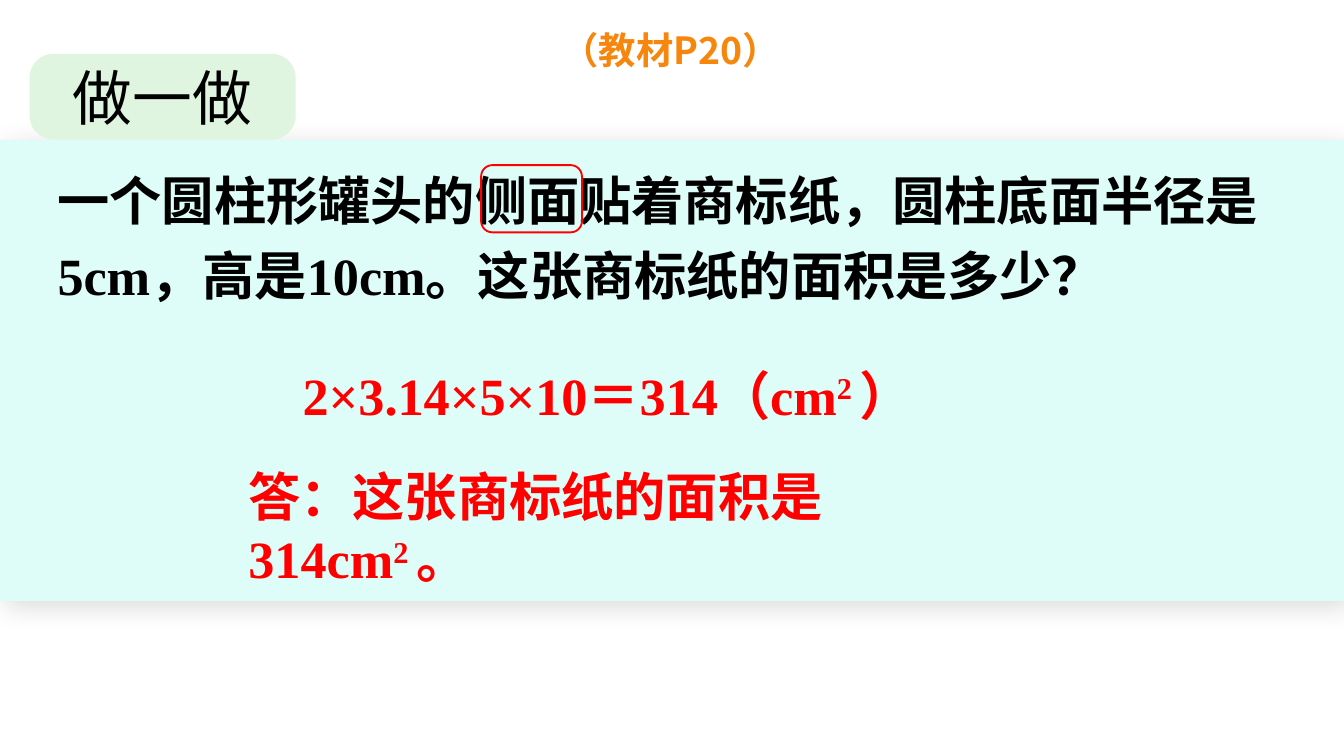
import pptx
import pptx.dml.color
import pptx.enum.lang
import pptx.enum.shapes
import pptx.enum.text
import pptx.oxml
import pptx.oxml.ns
import pptx.util
from pptx.util import Pt

RGBColor = pptx.dml.color.RGBColor
Shapes = pptx.enum.shapes.MSO_SHAPE

BLACK = RGBColor(0x00, 0x00, 0x00)
RED = RGBColor(0xFF, 0x00, 0x00)
ORANGE = RGBColor(0xF7, 0x86, 0x0C)
PANEL_FILL = RGBColor(0xDE, 0xFD, 0xF8)
TAG_FILL = RGBColor(0xE0, 0xF5, 0xE0)

SERIF = "Times New Roman"
SANS = "Noto Sans CJK SC"

PANEL_SHADOW = (
    '<a:effectLst %s><a:outerShdw blurRad="%d" dist="%d" dir="2700000" algn="tl" rotWithShape="0">'
    '<a:srgbClr val="000000"><a:alpha val="15000"/></a:srgbClr></a:outerShdw></a:effectLst>'
)


def write_text(paragraph, parts, font_name, size, color, bold=True):
    """Write (text, is_superscript) parts in one shared font."""
    for text, is_superscript in parts:
        run = paragraph.add_run()
        run.text = text
        run.font.language_id = pptx.enum.lang.MSO_LANGUAGE_ID.SIMPLIFIED_CHINESE
        if is_superscript:
            run.font._element.set("baseline", "30000")
    font = paragraph.font
    font.name, font.size, font.bold = font_name, Pt(size), bold
    font.color.rgb = color
    east_asian = pptx.oxml.parse_xml(
        '<a:ea %s typeface="%s"/>' % (pptx.oxml.ns.nsdecls("a"), SANS))
    font._element.find(pptx.oxml.ns.qn("a:latin")).addnext(east_asian)


def add_text(slide, left, top, width, height, parts, font_name=SERIF, size=28,
             color=RED, margin_left=7.2, margin_right=7.2):
    box = slide.shapes.add_textbox(Pt(left), Pt(top), Pt(width), Pt(height))
    frame = box.text_frame
    frame.word_wrap = True
    frame.margin_left, frame.margin_right = Pt(margin_left), Pt(margin_right)
    paragraph = frame.paragraphs[0]
    write_text(paragraph, parts, font_name, size, color)
    return paragraph


def add_block(slide, kind, left, top, width, height, fill=None):
    shape = slide.shapes.add_shape(kind, Pt(left), Pt(top), Pt(width), Pt(height))
    shape.shadow.inherit = False
    if fill is None:
        shape.fill.background()
    else:
        shape.fill.solid()
        shape.fill.fore_color.rgb = fill
        shape.line.fill.background()
    return shape


def add_panel(slide, left, top, width, height):
    panel = add_block(slide, Shapes.RECTANGLE, left, top, width, height, PANEL_FILL)
    properties = panel._element.spPr
    empty_effects = properties.find(pptx.oxml.ns.qn("a:effectLst"))
    shadow = PANEL_SHADOW % (pptx.oxml.ns.nsdecls("a"), Pt(15), Pt(5))
    properties.replace(empty_effects, pptx.oxml.parse_xml(shadow))


def add_exercise(slide, left, top, width, height):
    """Place the panel with the question, the calculation and the answer."""
    add_panel(slide, left, top, width, height)
    question = add_text(
        slide, left + 23.76, top + 5, 665.28, 88.56,
        [("一个圆柱形罐头的侧面贴着商标纸，圆柱底面半径是5cm，高是10cm。这张商标纸的面积是多少？", False)],
        color=BLACK)
    question.line_spacing = 1.2
    add_text(slide, left + 126, top + 170, 449.28, 41,
             [("答：这张商标纸的面积是314cm", False), ("2 ", True), ("。", False)],
             margin_right=50)
    add_text(slide, left + 133.92, top + 116, 444.96, 41,
             [("2×3.14×5×10＝314（cm", False), ("2 ", True), ("）", False)],
             margin_left=28.2)


def add_heading(slide, left, top, width, height):
    tag = add_block(slide, Shapes.ROUNDED_RECTANGLE, left, top, width, height, TAG_FILL)
    tag.adjustments[0] = 0.28
    frame = tag.text_frame
    frame.vertical_anchor = pptx.enum.text.MSO_ANCHOR.MIDDLE
    paragraph = frame.paragraphs[0]
    paragraph.alignment = pptx.enum.text.PP_ALIGN.CENTER
    write_text(paragraph, [("做一做", False)], SANS, 32, BLACK, bold=False)


def add_keyword_frame(slide, left, top, width, height):
    frame = add_block(slide, Shapes.ROUNDED_RECTANGLE, left, top, width, height)
    frame.line.color.rgb = RED
    frame.line.width = Pt(1)


def main():
    presentation = pptx.Presentation()
    presentation.slide_width, presentation.slide_height = Pt(720), Pt(405)
    slide = presentation.slides.add_slide(presentation.slide_layouts[6])
    add_exercise(slide, 0, 75, 720, 247)
    add_text(slide, 293.76, 10.8, 145.44, 31.5, [("（教材P20）", False)],
             SANS, 20, ORANGE)
    add_heading(slide, 15.84, 28.8, 142.56, 46)
    add_keyword_frame(slide, 257.76, 88.5, 54, 36)
    presentation.save("out.pptx")


if __name__ == "__main__":
    main()
